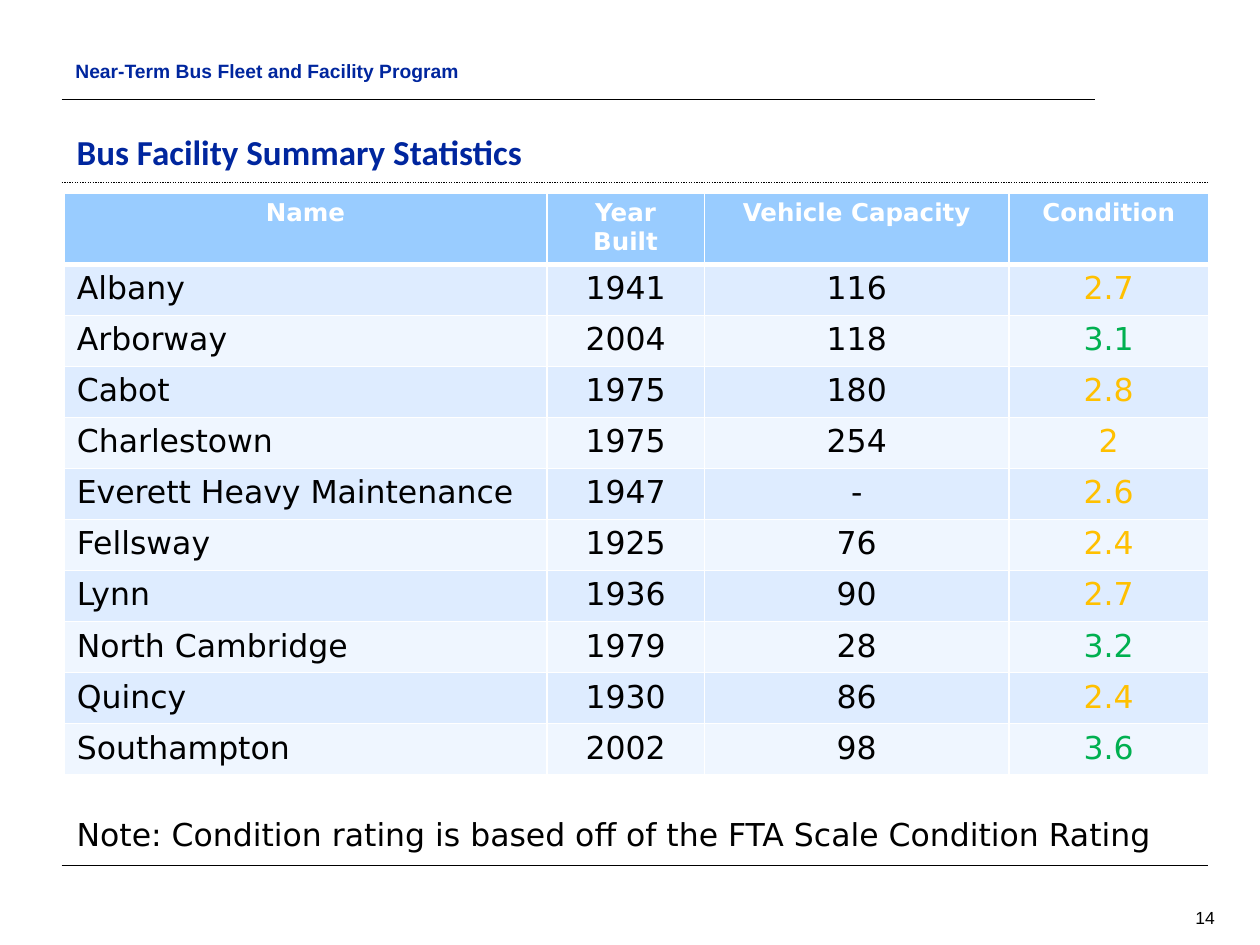
from lxml import etree
from pptx import Presentation
from pptx.dml.color import RGBColor
from pptx.enum.dml import MSO_LINE
from pptx.enum.shapes import MSO_CONNECTOR
from pptx.enum.text import MSO_ANCHOR, PP_ALIGN
from pptx.oxml.ns import qn
from pptx.util import Inches, Pt

STRAIGHT = MSO_CONNECTOR.STRAIGHT
DOTTED, SOLID = MSO_LINE.ROUND_DOT, MSO_LINE.SOLID
LEFT, CENTER, RIGHT = PP_ALIGN.LEFT, PP_ALIGN.CENTER, PP_ALIGN.RIGHT
TOP, MIDDLE, BOTTOM = MSO_ANCHOR.TOP, MSO_ANCHOR.MIDDLE, MSO_ANCHOR.BOTTOM

BLACK = RGBColor(0x00, 0x00, 0x00)
WHITE = RGBColor(0xFF, 0xFF, 0xFF)
NAVY = RGBColor(0x00, 0x26, 0x9E)
SKY = RGBColor(0x99, 0xCC, 0xFF)
BANDS = RGBColor(0xEF, 0xF6, 0xFF), RGBColor(0xDE, 0xEC, 0xFF)
AMBER = RGBColor(0xFF, 0xC0, 0x00)
GREEN = RGBColor(0x00, 0xB0, 0x50)
GOOD_CONDITION = 3

HEADER = ("Name", "Year Built", "Vehicle Capacity", "Condition")
FACILITIES = [
    ("Albany", "1941", "116", "2.7"),
    ("Arborway", "2004", "118", "3.1"),
    ("Cabot", "1975", "180", "2.8"),
    ("Charlestown", "1975", "254", "2"),
    ("Everett Heavy Maintenance", "1947", "-", "2.6"),
    ("Fellsway", "1925", "76", "2.4"),
    ("Lynn", "1936", "90", "2.7"),
    ("North Cambridge", "1979", "28", "3.2"),
    ("Quincy", "1930", "86", "2.4"),
    ("Southampton", "2002", "98", "3.6"),
]


def set_text(frame, text, size, font, color, bold=False, align=LEFT):
    frame.word_wrap = True
    para = frame.paragraphs[0]
    para.text = text
    para.alignment = align
    para.font.size = Pt(size)
    para.font.name = font
    para.font.bold = bold
    para.font.color.rgb = color


def add_border(cell, side, width):
    """Draw a white border on one side of a cell: lnL, lnR, lnT or lnB."""
    properties = cell._tc.get_or_add_tcPr()
    line = etree.Element(qn(f"a:{side}"), w=str(Pt(width)))
    fill = etree.SubElement(line, qn("a:solidFill"))
    etree.SubElement(fill, qn("a:srgbClr"), val=str(WHITE))
    properties.append(line)


deck = Presentation()
deck.slide_width, deck.slide_height = Inches(10), Inches(7.5)
page = deck.slides.add_slide(deck.slide_layouts[6])
unit = deck.slide_width / 100  # one hundredth of the slide's width

# Rules: y, right end, width, dash
for y, end, width, dash in [
    (14.5, 95.9, 0.75, DOTTED),
    (68.7, 95.9, 0.75, SOLID),
    (7.9, 86.9, 1, SOLID),
]:
    rule = page.shapes.add_connector(
        STRAIGHT, *(int(n * unit) for n in (4.9, y, end, y)))
    rule.line.color.rgb = BLACK
    rule.line.width = Pt(width)
    rule.line.dash_style = dash
    etree.SubElement(rule._element.spPr, qn("a:effectLst"))

# Text boxes: place, anchor, text, size, font, colour, bold, alignment
for place, anchor, *content in [
    ((5, 4.2, 78.3, 2.9), TOP, "Near-Term Bus Fleet and Facility Program",
     11, "Arial", NAVY, True, LEFT),
    ((5.1, 9.1, 84.8, 5.1), BOTTOM, "Bus Facility Summary Statistics",
     20, "Calibri", NAVY, True, LEFT),
    ((5.1, 64.2, 90.8, 4), TOP,
     "Note: Condition rating is based off of the FTA Scale Condition Rating",
     18, "DejaVu Sans", BLACK, False, LEFT),
    ((89.1, 71.6, 8.3, 2.5), MIDDLE, "14", 10, "Arial", BLACK, False, RIGHT),
]:
    box = page.shapes.add_textbox(*(int(n * unit) for n in place))
    box.text_frame.vertical_anchor = anchor
    set_text(box.text_frame, *content)

# Facility table
rows = [HEADER, *FACILITIES]
table = page.shapes.add_table(
    len(rows), len(HEADER),
    *(int(n * unit) for n in (5.1, 15.3, 90.8, 44.6))).table
for column, width in zip(table.columns, (38.3, 12.5, 24.2, 15.8)):
    column.width = int(width * unit)

for r, values in enumerate(rows):
    for c, value in enumerate(values):
        cell = table.cell(r, c)
        is_header = r == 0
        if is_header:
            color = WHITE
        elif c == 3:
            color = GREEN if float(value) >= GOOD_CONDITION else AMBER
        else:
            color = BLACK
        set_text(cell.text_frame, value, 14 if is_header else 18,
                 "DejaVu Sans", color, is_header,
                 CENTER if is_header or c else LEFT)
        for side in ("lnL", "lnR", "lnT", "lnB"):
            thick = (r, side) in ((0, "lnB"), (1, "lnT"))
            add_border(cell, side, 3 if thick else 1)
        cell.fill.solid()
        cell.fill.fore_color.rgb = SKY if is_header else BANDS[r % 2]

deck.save("out.pptx")
